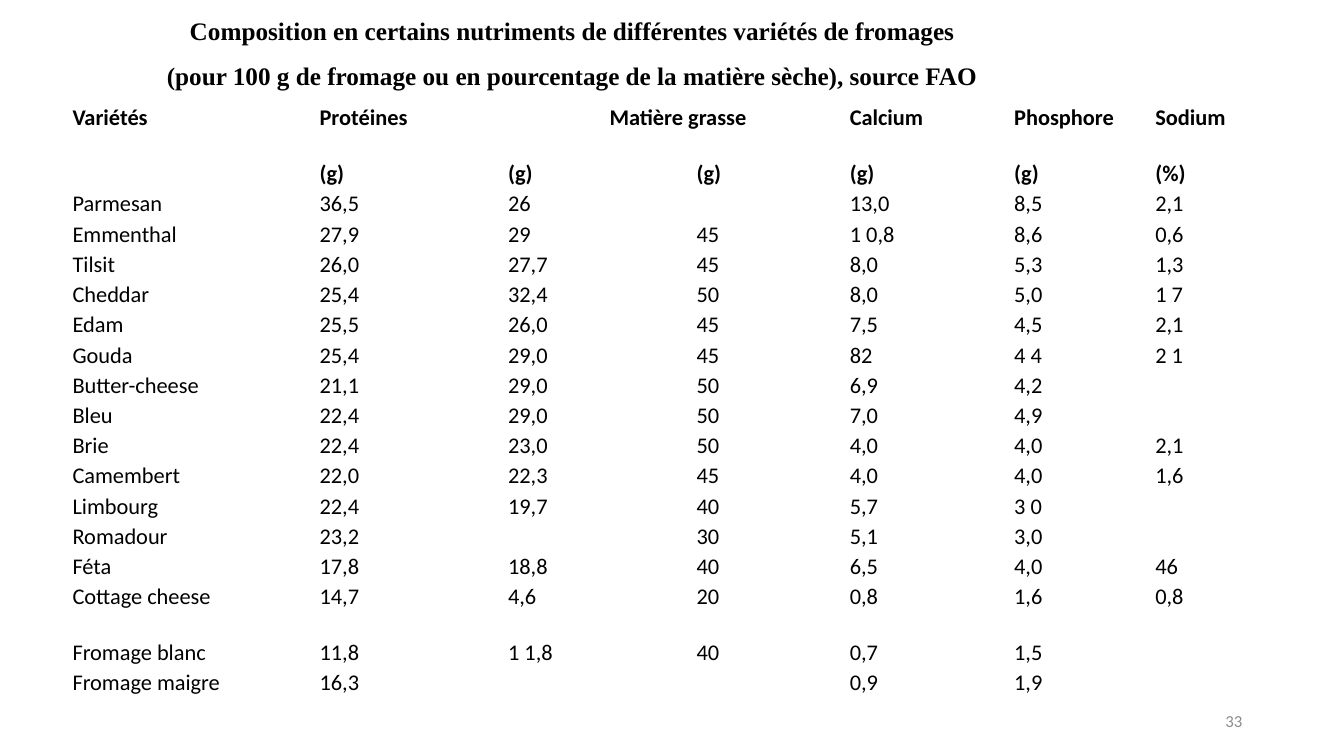
"""Build a slide with a table of nutrients in varieties of cheese."""
from lxml.etree import SubElement
from pptx import Presentation
from pptx.dml.color import RGBColor
from pptx.enum.text import MSO_ANCHOR, PP_ALIGN
from pptx.oxml.ns import qn
from pptx.util import Inches, Pt


def style(paragraph, font, size, color, bold=False):
    for span in paragraph.runs:
        span.font.name = font
        span.font.size = Pt(size)
        span.font.bold = bold
        span.font.color.rgb = RGBColor.from_string(color)


def add_text(page, lines, left, top, width, height):
    box = page.shapes.add_textbox(Inches(left), Inches(top), Inches(width), Inches(height))
    box.text_frame.word_wrap = True
    box.text_frame.text = "\n".join(lines)
    return box.text_frame


deck = Presentation()
deck.slide_width, deck.slide_height = Inches(13.33), Inches(7.5)
page = deck.slides.add_slide(deck.slide_layouts[6])

HEADER_ROWS = 2
ROWS = [
    ["Variétés", "Protéines", "Matière grasse", "", "Calcium", "Phosphore", "Sodium"],
    ["", "(g)", "(g)", "(g)", "(g)", "(g)", "(%)"],
    ["Parmesan", "36,5", "26", "", "13,0", "8,5", "2,1"],
    ["Emmenthal", "27,9", "29", "45", "1 0,8", "8,6", "0,6"],
    ["Tilsit", "26,0", "27,7", "45", "8,0", "5,3", "1,3"],
    ["Cheddar", "25,4", "32,4", "50", "8,0", "5,0", "1 7"],
    ["Edam", "25,5", "26,0", "45", "7,5", "4,5", "2,1"],
    ["Gouda", "25,4", "29,0", "45", "82", "4 4", "2 1"],
    ["Butter-cheese", "21,1", "29,0", "50", "6,9", "4,2", ""],
    ["Bleu", "22,4", "29,0", "50", "7,0", "4,9", ""],
    ["Brie", "22,4", "23,0", "50", "4,0", "4,0", "2,1"],
    ["Camembert", "22,0", "22,3", "45", "4,0", "4,0", "1,6"],
    ["Limbourg", "22,4", "19,7", "40", "5,7", "3 0", ""],
    ["Romadour", "23,2", "", "30", "5,1", "3,0", ""],
    ["Féta", "17,8", "18,8", "40", "6,5", "4,0", "46"],
    ["Cottage cheese", "14,7", "4,6", "20", "0,8", "1,6", "0,8"],
    ["Fromage blanc", "11,8", "1 1,8", "40", "0,7", "1,5", ""],
    ["Fromage maigre", "16,3", "", "", "0,9", "1,9", ""],
]
COLUMN_WIDTHS = [2.45, 1.87, 1.87, 1.52, 1.63, 1.4, 0.93]
TALL_ROWS = {0: 0.56, 15: 0.55, 17: 0.55}

table = page.shapes.add_table(
    len(ROWS), len(COLUMN_WIDTHS), Inches(0.71), Inches(1.02), Inches(11.67), Inches(6.1)
).table
table.first_row = False
table.horz_banding = False
for column, width in zip(table.columns, COLUMN_WIDTHS):
    column.width = Inches(width)
for row_index, values in enumerate(ROWS):
    table.rows[row_index].height = Inches(TALL_ROWS.get(row_index, 0.3))
    for column_index, value in enumerate(values):
        cell = table.cell(row_index, column_index)
        cell.fill.background()
        cell.margin_left = cell.margin_right = Inches(0.01)
        cell.margin_top = cell.margin_bottom = Inches(0.01)
        para = cell.text_frame.paragraphs[0]
        if value:
            para.text = value
            style(para, "Calibri", 16, "000000", row_index < HEADER_ROWS)
        else:
            SubElement(para._p, qn("a:endParaRPr"), sz="1600")
table.cell(0, 0).merge(table.cell(1, 0))
table.cell(0, 2).merge(table.cell(0, 3))
table.cell(0, 2).text_frame.paragraphs[0].alignment = PP_ALIGN.CENTER

title = add_text(page, [
    "Composition en certains nutriments de différentes variétés de fromages",
    "(pour 100 g de fromage ou en pourcentage de la matière sèche), source FAO",
], 1.48, 0, 8.39, 0.95)
title.margin_top = 0
for para in title.paragraphs:
    para.alignment = PP_ALIGN.CENTER
    para.line_spacing = 1.5
    style(para, "Times New Roman", 18, "000000", True)

number = add_text(page, ["33"], 9.42, 6.95, 3, 0.4)
number.vertical_anchor = MSO_ANCHOR.MIDDLE
number.paragraphs[0].alignment = PP_ALIGN.RIGHT
style(number.paragraphs[0], "Calibri", 12, "8C8C8C")

deck.save("out.pptx")
